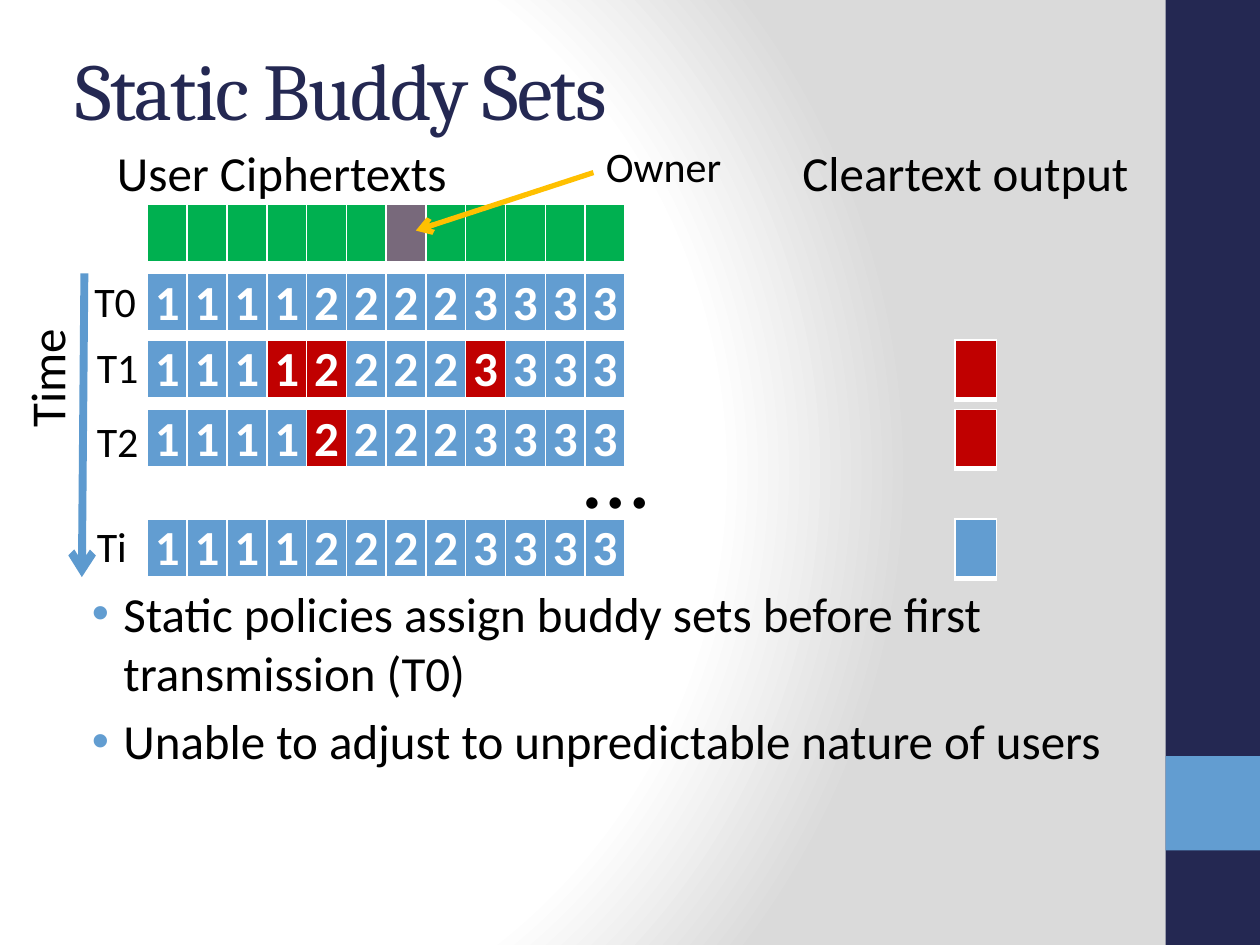
from pptx import Presentation
from pptx.dml.color import RGBColor
from pptx.enum.shapes import MSO_CONNECTOR, MSO_SHAPE
from pptx.enum.text import MSO_ANCHOR, MSO_AUTO_SIZE, PP_ALIGN
from pptx.oxml import parse_xml
from pptx.oxml.ns import nsdecls, qn
from pptx.util import Inches, Pt
from lxml.etree import SubElement

NAVY, BLUE, RED, GREEN = "242852", "629DD1", "C00000", "00B050"
MAUVE, GOLD, WHITE, BLACK = "78697B", "FFC000", "FFFFFF", "000000"
ROW_HEIGHT = 0.47
BUDDY_SETS = "111122223333"

# Each transmission: label, its offset, row offset, online users, output colour
TRANSMISSIONS = [
    ("T0", (0, 0.52), 0.55, (), None),
    ("T1", (0.02, 1.04), 1.08, (3, 4, 8), RED),
    ("T2", (0.02, 1.63), 1.63, (4,), RED),
    ("Ti", (0.02, 2.46), 2.5, (), BLUE),
]


def color(hex_string):
    return RGBColor.from_string(hex_string)


def write(paragraph, text, size=28, fill=BLACK, font="Calibri", bold=False, align=PP_ALIGN.LEFT):
    paragraph.alignment = align
    run = paragraph.add_run()
    run.text = text
    run.font.size = Pt(size)
    run.font.name = font
    run.font.bold = bold
    run.font.color.rgb = color(fill)
    return run


def place(shape, box):
    shape.left, shape.top, shape.width, shape.height = map(Inches, box)


def add_label(slide, text, box, rotation=0, **style):
    label = slide.shapes.add_textbox(*map(Inches, box))
    label.rotation = rotation
    label.text_frame.word_wrap = False
    label.text_frame.auto_size = MSO_AUTO_SIZE.SHAPE_TO_FIT_TEXT
    write(label.text_frame.paragraphs[0], text, **style)


def add_arrow(slide, start, end, fill, width):
    arrow = slide.shapes.add_connector(MSO_CONNECTOR.STRAIGHT, *map(Inches, (*start, *end)))
    arrow.line.color.rgb = color(fill)
    arrow.line.width = Pt(width)
    properties = arrow._element.spPr
    SubElement(properties.find(qn("a:ln")), qn("a:tailEnd"), type="arrow")
    SubElement(properties, qn("a:effectLst"))


def add_borders(cell):
    cell_properties = cell._tc.get_or_add_tcPr()
    for index, (side, points) in enumerate([("L", 1), ("R", 1), ("T", 1), ("B", 3)]):
        cell_properties.insert(index, parse_xml(
            f'<a:ln{side} {nsdecls("a")} w="{Pt(points)}"><a:solidFill>'
            f'<a:srgbClr val="{WHITE}"/></a:solidFill></a:ln{side}>'))


def add_cell_row(slide, left, top, width, fills, texts=""):
    """One-row table with a fill, and if given a digit, for each user."""
    table = slide.shapes.add_table(
        1, len(fills), *map(Inches, (left, top, width, ROW_HEIGHT))).table
    table.first_row = table.horz_banding = False
    for index, fill in enumerate(fills):
        table.columns[index].width = Inches(width / len(fills))
        cell = table.cell(0, index)
        cell.margin_left = cell.margin_right = cell.margin_top = cell.margin_bottom = 0
        cell.fill.solid()
        cell.fill.fore_color.rgb = color(fill)
        add_borders(cell)
        if texts:
            write(cell.text_frame.paragraphs[0], texts[index], fill=WHITE, bold=True,
                  align=PP_ALIGN.CENTER)


def add_background(slide):
    stops = "".join(f'<a:gs pos="{position}000"><a:srgbClr val="{fill}"/></a:gs>'
                    for position, fill in [(0, WHITE), (75, WHITE), (100, "DADADA")])
    slide.element.cSld.insert(0, parse_xml(
        f'<p:bg {nsdecls("p", "a")}><p:bgPr><a:gradFill rotWithShape="1"><a:gsLst>{stops}</a:gsLst>'
        '<a:path path="circle"><a:fillToRect l="20000" t="50000" r="100000" b="50000"/></a:path>'
        '</a:gradFill><a:effectLst/></p:bgPr></p:bg>'))


def add_side_band(slide, box):
    left, top, width, height = box
    accent = (left, top + 0.8 * height, width, width)
    for part, fill in [(box, NAVY), (accent, BLUE)]:
        band = slide.shapes.add_shape(MSO_SHAPE.RECTANGLE, *map(Inches, part))
        band.shadow.inherit = False
        band.fill.solid()
        band.fill.fore_color.rgb = color(fill)
        band.line.fill.background()


def fill_title(slide, box):
    title = slide.shapes.title
    place(title, box)
    title.text_frame.vertical_anchor = MSO_ANCHOR.MIDDLE
    run = write(title.text_frame.paragraphs[0], "Static Buddy Sets", size=46, fill=NAVY,
                font="Cambria")
    run.font._element.set("spc", "-100")


def add_ciphertexts(slide, box):
    left, top, width, _ = box
    # Headings and the users, with the owner picked out
    add_label(slide, "User Ciphertexts", (left - 0.34, top - 0.54, 2.85, 0.57))
    users = [MAUVE if user == 6 else GREEN for user in range(len(BUDDY_SETS))]
    add_cell_row(slide, left, top, width, users)
    add_label(slide, "Owner", (left + 3.54, top - 0.55, 1.13, 0.5), size=24)
    add_arrow(slide, (left + 3.54, top - 0.25), (left + 2.13, top + 0.21), GOLD, 3)

    # Time axis
    add_arrow(slide, (left - 0.5, top + 0.55), (left - 0.52, top + 2.96), "5D9ACF", 4.5)
    add_label(slide, "Time", (left - 1.3, top + 1.09, 0.99, 0.57), rotation=270)

    # Transmissions
    for name, (shift, label_top), row_top, online, _ in TRANSMISSIONS:
        label_width = 0.44 if name == "Ti" else 0.54
        add_label(slide, name, (left - 0.52 + shift, top + label_top, label_width, 0.5), size=24)
        fills = [RED if user in online else BLUE for user in range(len(BUDDY_SETS))]
        add_cell_row(slide, left, top + row_top, width, fills, BUDDY_SETS)
    add_label(slide, "…", (left + 3.36, top + 1.62, 0.72, 1.01), size=54)


def add_cleartext_output(slide, box):
    left, top, width, _ = box
    add_label(slide, "Cleartext output", (left - 1.31, top - 0.54, 2.82, 0.57))
    for _, _, row_top, _, output in TRANSMISSIONS:
        if output:
            add_cell_row(slide, left, top + row_top, width, [output])


def fill_bullets(slide, box, points):
    body = slide.placeholders[1]
    place(body, box)
    frame = body.text_frame
    frame.auto_size = MSO_AUTO_SIZE.NONE
    for index, point in enumerate(points):
        paragraph = frame.add_paragraph() if index else frame.paragraphs[0]
        properties = paragraph._p.get_or_add_pPr()
        properties.set("marL", str(Inches(0.38)))
        properties.set("indent", str(Inches(-0.25)))
        bullet_color = SubElement(properties, qn("a:buClr"))
        SubElement(bullet_color, qn("a:srgbClr"), val=BLUE)
        SubElement(properties, qn("a:buChar"), char="•")
        paragraph.space_before = Pt(5.6 if index else 0)
        write(paragraph, point)


def main():
    presentation = Presentation()
    presentation.slide_width, presentation.slide_height = Inches(10), Inches(7.5)
    slide = presentation.slides.add_slide(presentation.slide_layouts[1])
    add_background(slide)
    add_side_band(slide, (9.25, 0, 0.75, 7.5))
    fill_title(slide, (0.5, 0.08, 8.33, 1.25))
    fill_bullets(slide, (0.5, 4.58, 8.5, 2.75), [
        "Static policies assign buddy sets before first transmission (T0)",
        "Unable to adjust to unpredictable nature of users",
    ])
    add_ciphertexts(slide, (1.17, 1.62, 3.79, 2.97))
    add_cleartext_output(slide, (7.58, 1.62, 0.33, 2.97))
    presentation.save("out.pptx")


if __name__ == "__main__":
    main()
